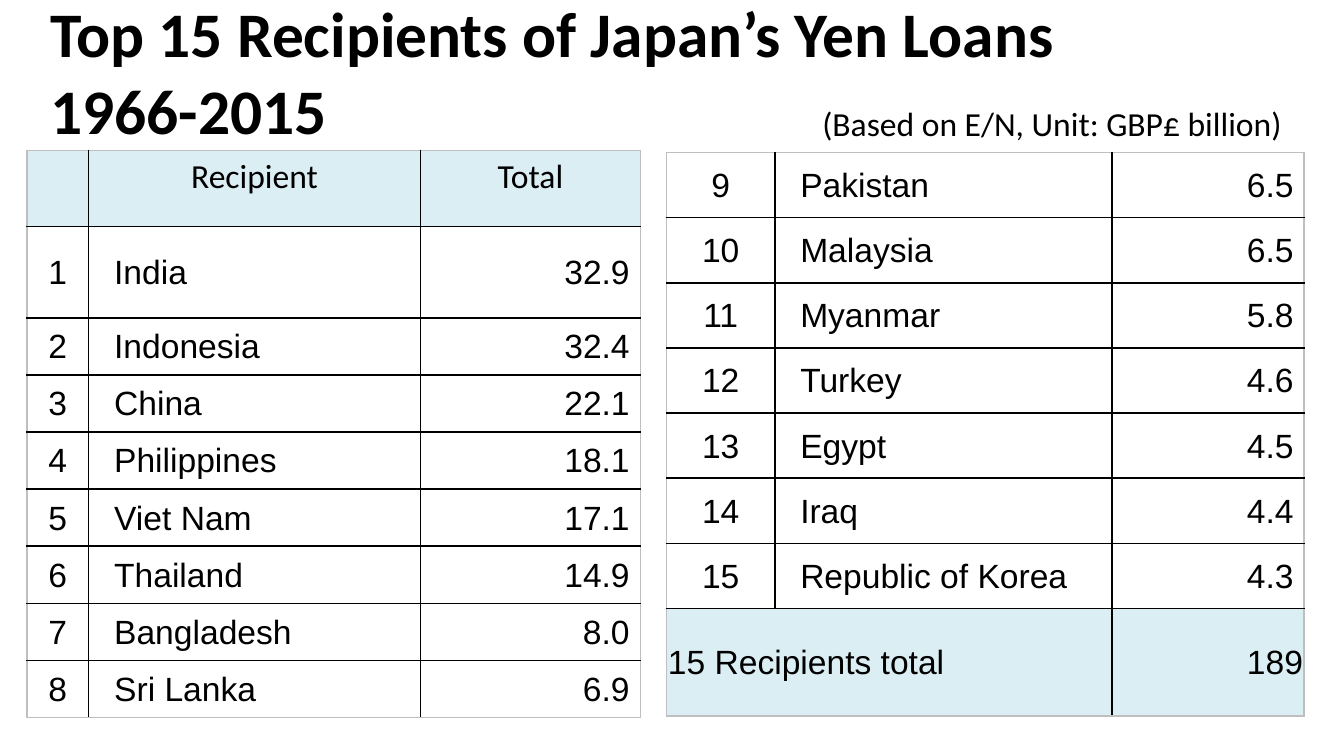
from lxml import etree
from pptx import Presentation
from pptx.dml.color import RGBColor
from pptx.enum.text import MSO_ANCHOR, MSO_AUTO_SIZE, PP_ALIGN
from pptx.oxml.ns import qn
from pptx.util import Emu, Pt

LEFT, CENTER, RIGHT = PP_ALIGN.LEFT, PP_ALIGN.CENTER, PP_ALIGN.RIGHT
TOP, MIDDLE = MSO_ANCHOR.TOP, MSO_ANCHOR.MIDDLE
COLORS = {"text": "000000", "band": "DBEEF4", "grid": "000000", "frame": "BFBFBF"}
TITLE_ONLY = 5

LEFT_LOANS = [
    ("1", "India", "32.9"), ("2", "Indonesia", "32.4"), ("3", "China", "22.1"),
    ("4", "Philippines", "18.1"), ("5", "Viet Nam", "17.1"), ("6", "Thailand", "14.9"),
    ("7", "Bangladesh", "8.0"), ("8", "Sri Lanka", "6.9"),
]
RIGHT_LOANS = [
    ("9", "Pakistan", "6.5"), ("10", "Malaysia", "6.5"), ("11", "Myanmar", "5.8"),
    ("12", "Turkey", "4.6"), ("13", "Egypt", "4.5"), ("14", "Iraq", "4.4"),
    ("15", "Republic of Korea", "4.3"),
]


def px(n):
    """200 px to the inch."""
    return Emu(n * 4572)


def write(tf, text, size=18, font="Arial", bold=False, align=LEFT, anchor=TOP):
    tf.vertical_anchor = anchor
    p = tf.paragraphs[0]
    p.text = text
    p.alignment = align
    for r in p.runs:
        r.font.size, r.font.name, r.font.bold = Pt(size), font, bold
        r.font.color.rgb = RGBColor.from_string(COLORS["text"])


def fill_cell(cell, text, margins=(2, 2, 2, 0), band=False, **fmt):
    cell.margin_left, cell.margin_top, cell.margin_right, cell.margin_bottom = map(px, margins)
    if text:
        write(cell.text_frame, text, **fmt)
        cell.vertical_anchor = fmt.get("anchor", TOP)
    if band:
        cell.fill.solid()
        cell.fill.fore_color.rgb = RGBColor.from_string(COLORS["band"])
    else:
        cell.fill.background()


def set_borders(cell, outer):
    """Black inner lines; grey on the sides named in outer."""
    tcPr = cell._tc.get_or_add_tcPr()
    for i, side in enumerate(("lnL", "lnR", "lnT", "lnB")):
        ln = etree.Element(qn("a:" + side), w=str(Pt(1)))
        color = COLORS["frame" if side in outer else "grid"]
        etree.SubElement(etree.SubElement(ln, qn("a:solidFill")), qn("a:srgbClr"), val=color)
        tcPr.insert(i, ln)


def add_grid(s, x, y, cols, rows):
    frame = s.shapes.add_table(len(rows), len(cols), px(x), px(y), px(sum(cols)), px(sum(rows)))
    table = frame.table
    table.first_row = table.horz_banding = False
    for col, w in zip(table.columns, cols):
        col.width = px(w)
    for row, h in zip(table.rows, rows):
        row.height = px(h)
    for i in range(len(rows)):
        for j in range(len(cols)):
            edges = {"lnL": j == 0, "lnR": j == len(cols) - 1,
                     "lnT": i == 0, "lnB": i == len(rows) - 1}
            set_borders(table.cell(i, j), [side for side, on in edges.items() if on])
    return table


def fill_loans(table, loans, first_row):
    for i, (rank, country, total) in enumerate(loans, first_row):
        fill_cell(table.cell(i, 0), rank, align=CENTER, anchor=MIDDLE)
        fill_cell(table.cell(i, 1), country, margins=(38, 2, 2, 0), anchor=MIDDLE)
        fill_cell(table.cell(i, 2), f"{total} ", align=RIGHT, anchor=MIDDLE)


def add_left_table(s, x, y):
    table = add_grid(s, x, y, [92, 494, 327], [113, 136] + [85] * 7)
    for j, head in enumerate(("", "Recipient", "Total")):
        fill_cell(table.cell(0, j), head, margins=(20, 9, 20, 9), band=True,
                  font="Calibri", align=CENTER)
    fill_loans(table, LEFT_LOANS, 1)


def add_right_table(s, x, y):
    table = add_grid(s, x, y, [161, 502, 286], [97] * 7 + [160])
    fill_loans(table, RIGHT_LOANS, 0)
    # Total row
    last = len(RIGHT_LOANS)
    table.cell(last, 0).merge(table.cell(last, 1))
    fill_cell(table.cell(last, 0), "15 Recipients total", band=True, anchor=MIDDLE)
    fill_cell(table.cell(last, 2), "189", band=True, align=RIGHT, anchor=MIDDLE)


def add_heading(s, x, y, w, h):
    title = s.shapes.title
    title.left, title.top, title.width, title.height = px(x), px(y), px(w), px(h)
    title.text_frame.auto_size = MSO_AUTO_SIZE.NONE
    write(title.text_frame, "Top 15 Recipients of Japan’s Yen Loans\v1966-2015",
          size=34, font="Calibri", bold=True, anchor=MIDDLE)


def add_unit_note(s, x, y, w, h):
    tf = s.shapes.add_textbox(px(x), px(y), px(w), px(h)).text_frame
    tf.word_wrap = False
    tf.auto_size = MSO_AUTO_SIZE.SHAPE_TO_FIT_TEXT
    write(tf, "(Based on E/N, Unit: GBP£ billion)", font="Calibri")


def main():
    prs = Presentation()
    prs.slide_width, prs.slide_height = px(2000), px(1125)
    s = prs.slides.add_slide(prs.slide_layouts[TITLE_ONLY])
    add_heading(s, 55, 11, 1862, 188)
    add_left_table(s, 40, 224)
    add_right_table(s, 992, 227)
    add_unit_note(s, 1204, 144, 732, 80)
    prs.save("out.pptx")


if __name__ == "__main__":
    main()
